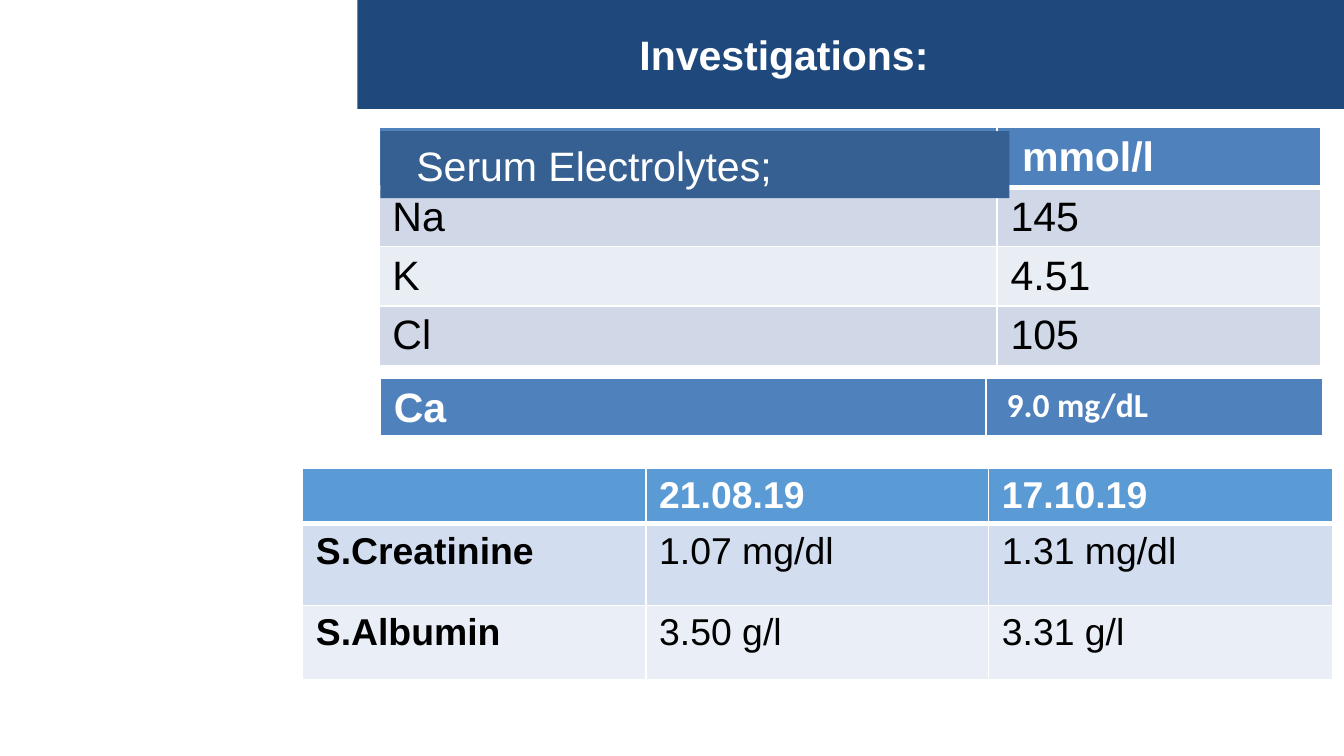
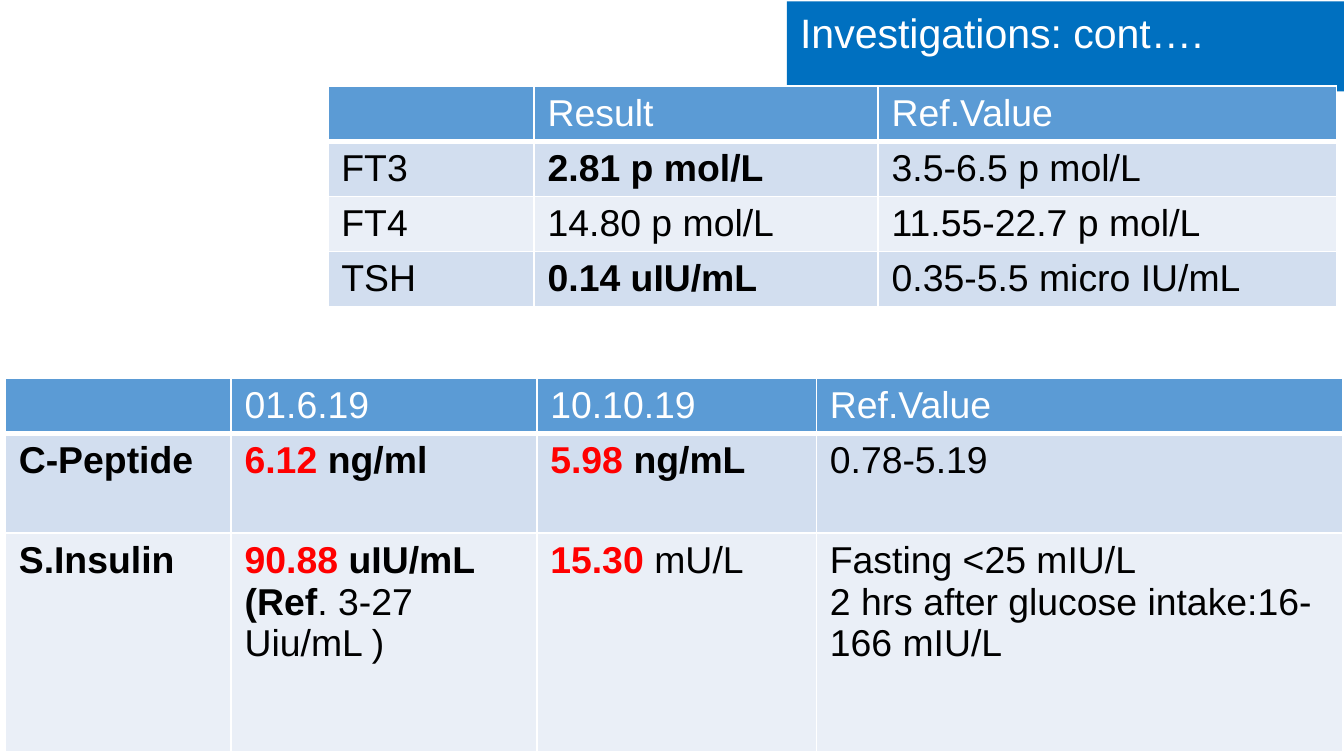
from dataclasses import dataclass

from lxml import etree
from pptx import Presentation
from pptx import util as u
from pptx.dml.color import RGBColor
from pptx.enum import shapes, text
from pptx.oxml import ns

WIDTH = u.Inches(10)
HEIGHT = u.Emu(WIDTH * 9 // 16)
GRID = WIDTH / 100  # one column and one row of the square layout grid


@dataclass(frozen=True)
class Palette:
    header: str
    bands: tuple


@dataclass(frozen=True)
class Theme:
    font: str = "Arial"
    small_font: str = "Calibri"
    large: int = 22
    medium: int = 20
    small: int = 18
    white: str = "FFFFFF"
    black: str = "000000"
    red: str = "FF0000"
    navy: str = "1F497D"
    steel: str = "376092"
    azure: str = "0070C0"
    rule: float = 1
    heavy_rule: float = 3
    deep: Palette = Palette("4F81BD", ("D0D8E8", "E9EDF4"))
    light: Palette = Palette("5B9BD5", ("D2DEEF", "EAEFF7"))


THEME = Theme()


@dataclass(frozen=True)
class Run:
    """A stretch of text; unset fields take the style of its cell or band."""
    text: str
    bold: bool = None
    color: str = None
    size: int = None
    font: str = None


def bold(words):
    return Run(words, bold=True)


def alert(words):
    """A value outside its reference range."""
    return Run(words, bold=True, color=THEME.red)


def grid(*lengths):
    return [u.Emu(round(n * GRID)) for n in lengths]


def add_run(p, run, size, color, is_bold):
    r = p.add_run()
    r.text = run.text
    font = r.font
    font.name = run.font or THEME.font
    font.size = u.Pt(run.size or size)
    font.bold = is_bold if run.bold is None else run.bold
    font.color.rgb = RGBColor.from_string(run.color or color)


def indent(p, columns):
    pPr = p._p.get_or_add_pPr()
    pPr.set("marL", str(grid(columns)[0]))
    pPr.set("indent", "0")


def add_band(s, box, words, fill, anchor, inset=0, is_bold=False):
    sp = s.shapes.add_shape(shapes.MSO_SHAPE.RECTANGLE, *grid(*box))
    sp.shadow.inherit = False
    sp.fill.solid()
    sp.fill.fore_color.rgb = RGBColor.from_string(fill)
    sp.line.fill.background()
    tf = sp.text_frame
    tf.word_wrap = True
    tf.vertical_anchor = anchor
    p = tf.paragraphs[0]
    p.alignment = text.PP_ALIGN.LEFT
    indent(p, inset)
    add_run(p, Run(words), THEME.large, THEME.white, is_bold)


def set_borders(cell, top, bottom):
    tcPr = cell._tc.get_or_add_tcPr()
    widths = {"L": THEME.rule, "R": THEME.rule, "T": top, "B": bottom}
    for side, width in widths.items():
        ln = etree.SubElement(tcPr, ns.qn("a:ln" + side), w=str(u.Pt(width)))
        fill = etree.SubElement(ln, ns.qn("a:solidFill"))
        etree.SubElement(fill, ns.qn("a:srgbClr"), val=THEME.white)


def fill_cell(cell, content, size, color, is_bold, inset):
    """Write a string (one paragraph per line), a run, or a list of runs."""
    if isinstance(content, str):
        paragraphs = [[Run(line)] for line in content.split("\n")] if content else []
    else:
        paragraphs = [content if isinstance(content, list) else [content]]
    tf = cell.text_frame
    for i, runs in enumerate(paragraphs):
        p = tf.add_paragraph() if i else tf.paragraphs[0]
        if inset:
            indent(p, inset)
        for run in runs:
            add_run(p, run, size, color, is_bold)


def add_table(s, left, top, columns, heights, rows, palette, size,
              bold_header=False, insets=None):
    """Draw a header row over banded rows; insets maps (row, column) to an indent."""
    box = grid(left, top, sum(columns), sum(heights))
    table = s.shapes.add_table(len(rows), len(columns), *box).table
    table.horz_banding = False
    for column, width in zip(table.columns, grid(*columns)):
        column.width = width
    for row, height in zip(table.rows, grid(*heights)):
        row.height = height
    for i, contents in enumerate(rows):
        header = i == 0
        fill = palette.header if header else palette.bands[(i - 1) % 2]
        for j, content in enumerate(contents):
            cell = table.cell(i, j)
            set_borders(cell, THEME.heavy_rule if i == 1 else THEME.rule,
                        THEME.heavy_rule if header else THEME.rule)
            cell.fill.solid()
            cell.fill.fore_color.rgb = RGBColor.from_string(fill)
            fill_cell(cell, content, size, THEME.white if header else THEME.black,
                      header and bold_header, (insets or {}).get((i, j), 0))


def build_investigations(s):
    add_band(s, (26.6, 0, 73.4, 8.1), "Investigations:", THEME.navy,
             text.MSO_ANCHOR.MIDDLE, inset=20, is_bold=True)
    electrolytes = [["", "mmol/l"], ["Na", "145"], ["K", "4.51"], ["Cl", "105"]]
    add_table(s, 28.2, 9.5, (46, 24.1), [4.4] * 4, electrolytes, THEME.deep,
              THEME.large, bold_header=True, insets={(0, 1): 0.85})
    add_band(s, (28.3, 9.75, 46.8, 5), "Serum Electrolytes;", THEME.steel,
             text.MSO_ANCHOR.MIDDLE, inset=1.7)
    renal = [["", "21.08.19", "17.10.19"],
             [bold("S.Creatinine"), "1.07 mg/dl", "1.31 mg/dl"],
             [bold("S.Albumin"), "3.50 g/l", "3.31 g/l"]]
    add_table(s, 22.5, 34.85, (25.55, 25.5, 25.65), (4, 6.1, 5.5), renal,
              THEME.light, THEME.medium, bold_header=True)
    calcium = Run("9.0 mg/dL", size=THEME.small, font=THEME.small_font)
    add_table(s, 28.3, 28.15, (45.05, 25.05), [4.1], [["Ca", calcium]], THEME.deep,
              THEME.large, bold_header=True, insets={(0, 1): 0.55})


def build_hormones(s):
    add_band(s, (58.55, 0.1, 41.45, 6.7), "Investigations: cont….", THEME.azure,
             text.MSO_ANCHOR.TOP)
    thyroid = [["", "Result", "Ref.Value"],
               ["FT3", bold("2.81 p mol/L"), "3.5-6.5 p mol/L"],
               ["FT4", "14.80 p mol/L", "11.55-22.7 p mol/L"],
               ["TSH", bold("0.14 uIU/mL"), "0.35-5.5 micro IU/mL"]]
    add_table(s, 24.4, 6.4, (15.35, 25.6, 34.1), [4.1] * 4, thyroid,
              THEME.light, THEME.medium)
    pancreas = [
        ["", "01.6.19", "10.10.19", "Ref.Value"],
        [bold("C-Peptide"), [alert("6.12 "), bold("ng/ml")],
         [alert("5.98 "), bold("ng/mL")], "0.78-5.19"],
        [bold("S.Insulin"),
         [alert("90.88 "), bold("uIU/mL (Ref"), Run(". 3-27 Uiu/mL )")],
         [alert("15.30 "), Run("mU/L")],
         "Fasting <25 mIU/L\n2 hrs after glucose intake:16-166 mIU/L"]]
    add_table(s, 0.4, 28.15, (16.8, 22.75, 20.8, 39.2), (4.1, 7.4, 16.3), pancreas,
              THEME.light, THEME.medium)


def main():
    prs = Presentation()
    prs.slide_width, prs.slide_height = WIDTH, HEIGHT
    for build in (build_investigations, build_hormones):
        build(prs.slides.add_slide(prs.slide_layouts[6]))
    prs.save("out.pptx")


if __name__ == "__main__":
    main()
